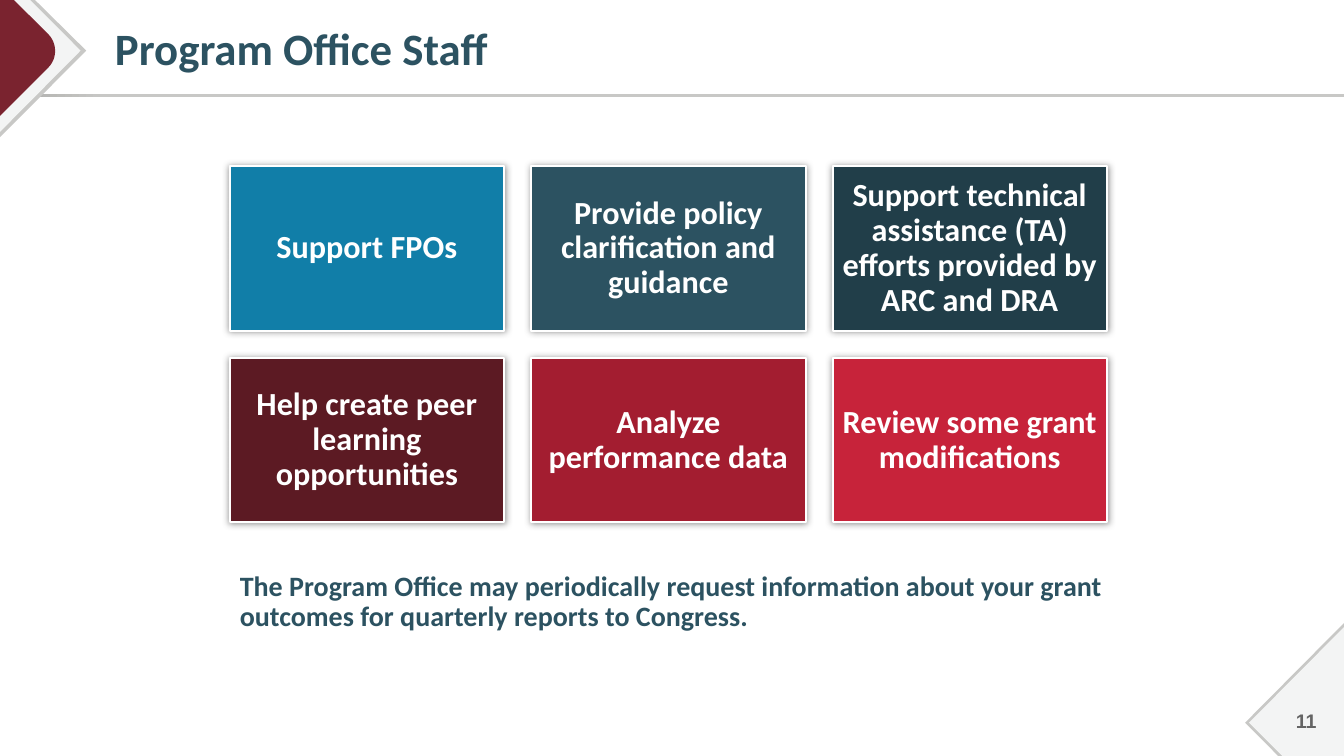
import pptx
import pptx.dml.color
import pptx.enum.shapes
import pptx.enum.text
import pptx.oxml
import pptx.oxml.ns
import pptx.util

Pt = pptx.util.Pt
RGB = pptx.dml.color.RGBColor.from_string
ALIGN = pptx.enum.text.PP_ALIGN
ANCHOR = pptx.enum.text.MSO_ANCHOR
RECTANGLE = pptx.enum.shapes.MSO_SHAPE.RECTANGLE

COLORS = {
    "rule_start": "ABABA8", "rule": "C8C8C6", "pale": "F3F4F4",
    "maroon": "7A232F", "slate": "2C5261", "blue": "117EA8",
    "navy": "213E49", "wine": "5C1A23", "crimson": "A31D30",
    "red": "C7233A", "white": "FFFFFF", "number": "646464",
}


def write_text(shape, text, size, color, align, anchor, margins, font_name="Calibri", spacing=0.9):
    left, top, right, bottom = margins
    frame_format = {
        "word_wrap": True, "auto_size": pptx.enum.text.MSO_AUTO_SIZE.NONE,
        "vertical_anchor": anchor, "margin_left": Pt(left), "margin_top": Pt(top),
        "margin_right": Pt(right), "margin_bottom": Pt(bottom),
    }
    frame = shape.text_frame
    frame.text = text
    paragraph = frame.paragraphs[0]
    paragraph_format = {"alignment": align, "line_spacing": spacing}
    font_format = {"name": font_name, "size": Pt(size), "bold": True}
    for target, values in ((frame, frame_format), (paragraph, paragraph_format), (paragraph.font, font_format)):
        for name, value in values.items():
            setattr(target, name, value)
    paragraph.font.color.rgb = RGB(COLORS[color])


presentation = pptx.Presentation()
presentation.slide_width = Pt(960)
presentation.slide_height = Pt(540)
slide = presentation.slides.add_slide(presentation.slide_layouts[5])
shapes = slide.shapes

rule = shapes.add_shape(RECTANGLE, Pt(0), Pt(67), Pt(960), Pt(2.16))
rule.shadow.inherit = False
rule.line.fill.background()
rule.fill.gradient()
rule.fill.gradient_angle = 0
for stop, color, position in zip(rule.fill.gradient_stops, ("rule_start", "rule"), (0, 0.08)):
    stop.color.rgb = RGB(COLORS[color])
    stop.position = position

rounded_tip = []
for step in range(13):
    t = step / 12
    weights = ((1 - t) ** 3, 3 * t * (1 - t) ** 2, 3 * t ** 2 * (1 - t), t ** 3)
    rounded_tip.append(tuple(
        sum(weight * value for weight, value in zip(weights, values))
        for values in ((34.6, 41, 41, 34.6), (24.5, 31, 41.8, 48.2))
    ))

corners = [
    ("rule", [(0, 0), (25, 0), (61.6, 36.2), (0, 98)]),
    ("pale", [(0, 0), (21.6, 0), (57.6, 36.2), (0, 94.2)]),
    ("maroon", [(0, 0), (10, 0), *rounded_tip, (0, 82.8)]),
    ("rule", [(960, 445), (960, 540), (913, 540), (889.4, 516.2)]),
    ("pale", [(960, 448), (960, 540), (916, 540), (892.2, 516.2)]),
]
for color, points in corners:
    vertices = [(Pt(x), Pt(y)) for x, y in points]
    builder = shapes.build_freeform(*vertices[0], scale=1.0)
    builder.add_line_segments(vertices[1:], close=True)
    corner = builder.convert_to_shape()
    corner.shadow.inherit = False
    corner.fill.solid()
    corner.fill.fore_color.rgb = RGB(COLORS[color])
    corner.line.fill.background()

title = shapes.title
title_place = {"left": Pt(67.7), "top": Pt(15.8), "width": Pt(443.5), "height": Pt(54.7)}
for name, value in title_place.items():
    setattr(title, name, value)
write_text(title, "Program Office Staff", 32, "slate", ALIGN.LEFT, ANCHOR.TOP, (14.4, 3.6, 7.2, 3.6))

cards = [
    ("Support FPOs", "blue"),
    ("Provide policy clarification and guidance", "slate"),
    ("Support technical assistance (TA) efforts provided by ARC and DRA", "navy"),
    ("Help create peer learning opportunities", "wine"),
    ("Analyze performance data", "crimson"),
    ("Review some grant modifications", "red"),
]
shadow_xml = (
    f'<a:outerShdw {pptx.oxml.ns.nsdecls("a")} blurRad="{Pt(5)}" dist="0" dir="0">'
    '<a:srgbClr val="000000"><a:alpha val="40000"/></a:srgbClr></a:outerShdw>'
)
for index, (text, color) in enumerate(cards):
    row, column = divmod(index, 3)
    card = shapes.add_shape(
        RECTANGLE, Pt(164.2 + 215.3 * column), Pt(118.8 + 137 * row), Pt(196), Pt(117.4)
    )
    card.fill.solid()
    card.fill.fore_color.rgb = RGB(COLORS[color])
    card.line.color.rgb = RGB(COLORS["white"])
    card.line.width = Pt(1.5)
    card.shadow.inherit = False
    effects = card.element.spPr.find(pptx.oxml.ns.qn("a:effectLst"))
    effects.append(pptx.oxml.parse_xml(shadow_xml))
    write_text(card, text, 23, "white", ALIGN.CENTER, ANCHOR.MIDDLE, (6, 7, 6, 7))

number = shapes.add_textbox(Pt(896.4), Pt(500.4), Pt(51.1), Pt(28.8))
write_text(number, "11", 14, "number", ALIGN.RIGHT, ANCHOR.MIDDLE, (7.2, 3.6, 7.2, 3.6), "Arial", 1.0)

note = shapes.add_textbox(Pt(164.2), Pt(405.4), Pt(641.5), Pt(78.5))
write_text(
    note,
    "The Program Office may periodically request information about your grant "
    "outcomes for quarterly reports to Congress.",
    20, "slate", ALIGN.LEFT, ANCHOR.TOP, (7.2, 3.6, 7.2, 3.6),
)

presentation.save("out.pptx")
